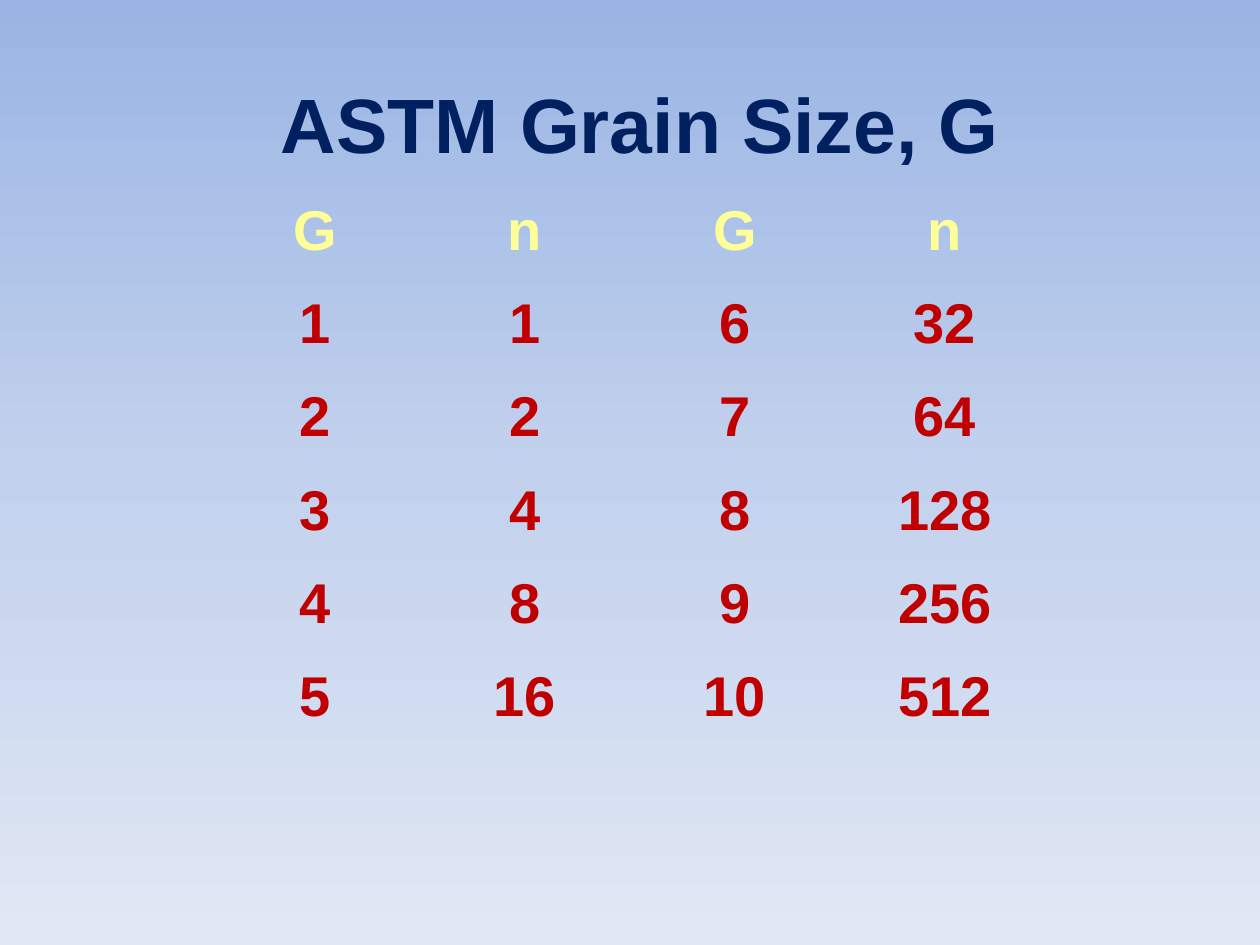
from copy import deepcopy

from pptx import Presentation
from pptx.dml.color import RGBColor
from pptx.enum.text import MSO_ANCHOR, MSO_AUTO_SIZE, PP_ALIGN
from pptx.oxml.ns import qn
from pptx.util import Emu, Pt

CENTER = PP_ALIGN.CENTER
TOP = MSO_ANCHOR.TOP
NO_AUTOFIT = MSO_AUTO_SIZE.NONE
NO_STYLE_NO_GRID = "{2D5ABB26-0587-4C30-8999-92F81FD0307C}"

THEME = {
    "font": "Arial",
    "title": "002060",
    "header": "FFFF99",
    "value": "C00000",
    "background": [(0, "9AB5E4"), (0.5, "C2D1ED"), (1, "E1E8F5")],
    "title_size": 44,
    "cell_size": 32,
}


def px(length):
    return Emu(round(length * 914400 / 126))


def add_centered_run(paragraph, text, size, color):
    paragraph.alignment = CENTER
    run = paragraph.add_run()
    run.text = text
    run.font.name = THEME["font"]
    run.font.size = Pt(size)
    run.font.bold = True
    run.font.color.rgb = RGBColor.from_string(color)


prs = Presentation()
prs.slide_width, prs.slide_height = px(1260), px(945)
slide = prs.slides.add_slide(prs.slide_layouts[5])

# Background: three-stop gradient from top to bottom
backdrop = slide.background.fill
backdrop.gradient()
backdrop.gradient_angle = 270
first_stop = slide.element.find(".//" + qn("a:gs"))
first_stop.addnext(deepcopy(first_stop))
for stop, (position, color) in zip(backdrop.gradient_stops, THEME["background"]):
    stop.position = position
    stop.color.rgb = RGBColor.from_string(color)

# Title
title = slide.shapes.title
title.left, title.top, title.width, title.height = px(105), px(63), px(1071), px(105)
title_text = title.text_frame
title_text.word_wrap = True
title_text.auto_size = NO_AUTOFIT
title_text.vertical_anchor = TOP
title_text.margin_top = px(14)
add_centered_run(title_text.paragraphs[0], "ASTM Grain Size, G",
                 THEME["title_size"], THEME["title"])

# Grain size table: n doubles with each step of G, in two halves side by side
grain_rows = [["G", "n", "G", "n"]]
for g in range(1, 6):
    grain_rows.append([str(number) for number in (g, 2 ** (g - 1), g + 5, 2 ** (g + 4))])

grain_frame = slide.shapes.add_table(6, 4, px(210), px(193), px(840), px(560))
grain_frame.element.find(".//" + qn("a:tableStyleId")).text = NO_STYLE_NO_GRID
grain_table = grain_frame.table
grain_table.first_row = False
grain_table.horz_banding = False

for r, values in enumerate(grain_rows):
    color = THEME["value"] if r else THEME["header"]
    for c, value in enumerate(values):
        cell = grain_table.cell(r, c)
        cell.fill.background()
        cell.vertical_anchor = TOP
        add_centered_run(cell.text_frame.paragraphs[0], value, THEME["cell_size"], color)

prs.save("out.pptx")
